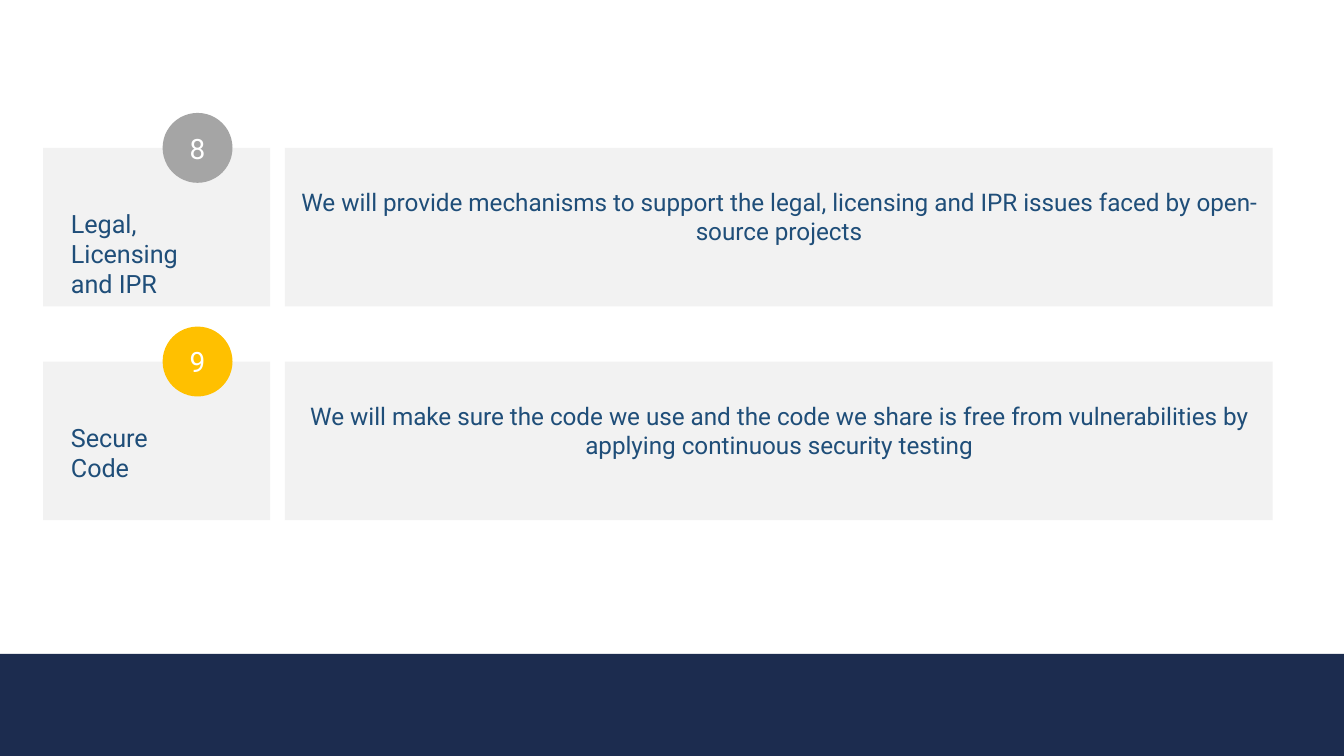
from pptx import Presentation
from pptx.dml.color import RGBColor
from pptx.enum.shapes import MSO_SHAPE
from pptx.enum.text import MSO_ANCHOR, PP_ALIGN
from pptx.util import Inches, Pt

RECTANGLE = MSO_SHAPE.RECTANGLE
OVAL = MSO_SHAPE.OVAL
MIDDLE = MSO_ANCHOR.MIDDLE
LEFT = PP_ALIGN.LEFT
CENTER = PP_ALIGN.CENTER

FONT = "Roboto"
NAVY = "1C2C4F"
BLUE = "1F4E79"
PALE = "F2F2F2"
WHITE = "FFFFFF"

SLIDE_WIDTH = 10
SLIDE_HEIGHT = SLIDE_WIDTH * 9 / 16
BAND_HEIGHT = 0.76
FIRST_TOP = 1.1
ROW_STEP = 1.59
CARD_HEIGHT = 1.18
BADGE_SIZE = 0.52

COMMITMENTS = [
    ("8", "A5A5A5", ["Legal, Licensing and IPR"], 0.78,
     "We will provide mechanisms to support the legal, licensing and IPR "
     "issues faced by open-source projects"),
    ("9", "FFC000", ["Secure", "Code"], 0.56,
     "We will make sure the code we use and the code we share is free from "
     "vulnerabilities by applying continuous security testing"),
]


def color(value):
    """Turn a hex string into a colour."""
    return RGBColor.from_string(value)


def write(shape, lines, size, text_color, alignment):
    """Write one paragraph per line into a shape."""
    frame = shape.text_frame
    frame.word_wrap = True
    for index, line in enumerate(lines):
        paragraph = frame.add_paragraph() if index else frame.paragraphs[0]
        paragraph.alignment = alignment
        run = paragraph.add_run()
        run.text = line
        run.font.name = FONT
        run.font.size = Pt(size)
        run.font.color.rgb = color(text_color)


def add_block(slide, kind, left, top, width, height, fill):
    """Add a flat filled shape without an outline."""
    shape = slide.shapes.add_shape(
        kind, Inches(left), Inches(top), Inches(width), Inches(height))
    shape.shadow.inherit = False
    shape.fill.solid()
    shape.fill.fore_color.rgb = color(fill)
    shape.line.fill.background()
    return shape


def write_centered(shape, text, size, text_color, bottom=0.02):
    """Centre text in a shape with narrow margins."""
    frame = shape.text_frame
    frame.vertical_anchor = MIDDLE
    frame.margin_left = frame.margin_right = Inches(0.04)
    frame.margin_top = Inches(0.02)
    frame.margin_bottom = Inches(bottom)
    write(shape, [text], size, text_color, CENTER)


def add_title_card(slide, top, number, badge_color, title, title_height):
    """Add a title card with its numbered badge."""
    add_block(slide, RECTANGLE, 0.32, top, 1.69, CARD_HEIGHT, PALE)
    badge = add_block(slide, OVAL, 1.21, top - BADGE_SIZE / 2,
                      BADGE_SIZE, BADGE_SIZE, badge_color)
    write_centered(badge, number, 15, WHITE)
    label = slide.shapes.add_textbox(
        Inches(0.43), Inches(top + 0.4), Inches(1.33), Inches(title_height))
    write(label, title, 13.5, BLUE, LEFT)


def add_description_card(slide, top, text):
    """Add a description card with its text set above the middle."""
    card = add_block(slide, RECTANGLE, 2.12, top, 7.35, CARD_HEIGHT, PALE)
    write_centered(card, text, 13, BLUE, bottom=0.18)


def main():
    """Build and save the slide."""
    presentation = Presentation()
    presentation.slide_width = Inches(SLIDE_WIDTH)
    presentation.slide_height = Inches(SLIDE_HEIGHT)
    slide = presentation.slides.add_slide(presentation.slide_layouts[6])
    add_block(slide, RECTANGLE, 0, SLIDE_HEIGHT - BAND_HEIGHT,
              SLIDE_WIDTH, BAND_HEIGHT, NAVY)
    tops = [FIRST_TOP + row * ROW_STEP for row in range(len(COMMITMENTS))]
    for top, (*title_parts, _) in zip(tops, COMMITMENTS):
        add_title_card(slide, top, *title_parts)
    for top, (*_, text) in zip(tops, COMMITMENTS):
        add_description_card(slide, top, text)
    presentation.save("out.pptx")


if __name__ == "__main__":
    main()
